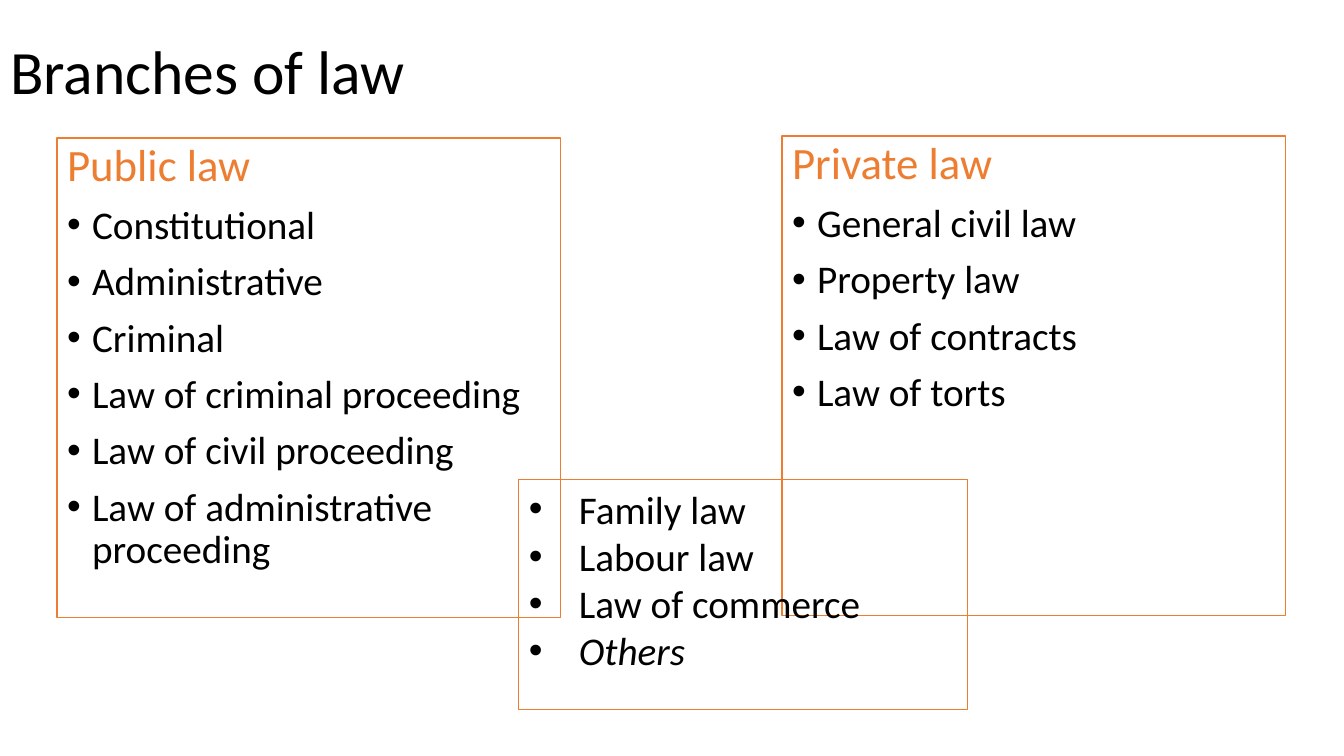
from pptx import Presentation
from pptx.dml.color import RGBColor
from pptx.enum.text import MSO_ANCHOR, MSO_AUTO_SIZE, PP_ALIGN
from pptx.util import Emu, Pt
from lxml import etree

LEFT, TOP, MIDDLE = PP_ALIGN.LEFT, MSO_ANCHOR.TOP, MSO_ANCHOR.MIDDLE
NO_AUTOFIT = MSO_AUTO_SIZE.NONE
DRAWING = "{http://schemas.openxmlformats.org/drawingml/2006/main}"
EMU_PER_PX = 12192000 / 1344
COLORS = {"text": "000000", "accent": "ED7D31"}
TWO_CONTENT = 3


def place(box, left, top, width, height, anchor=TOP, outlined=True):
    box.left, box.top, box.width, box.height = (
        Emu(round(length * EMU_PER_PX)) for length in (left, top, width, height))
    frame = box.text_frame
    frame.word_wrap = True
    frame.auto_size = NO_AUTOFIT
    frame.vertical_anchor = anchor
    if outlined:
        box.line.color.rgb = RGBColor.from_string(COLORS["accent"])
        box.line.width = Pt(0.75)


def write(frame, text, size=28, color="text", italic=False, indent=0, spacing=0.9, before=10):
    """Add a paragraph, bulleted when it has a hanging indent in px."""
    para = frame.paragraphs[0]
    if para.runs:
        para = frame.add_paragraph()
    para.alignment = LEFT
    para.line_spacing = spacing
    para.space_before = Pt(before)
    span = para.add_run()
    span.text = text
    span.font.name = "Calibri"
    span.font.size = Pt(size)
    span.font.italic = italic
    span.font.color.rgb = RGBColor.from_string(COLORS[color])
    hanging = round(indent * EMU_PER_PX)
    properties = para._p.get_or_add_pPr()
    properties.set("marL", str(hanging))
    properties.set("indent", str(-hanging))
    if indent:
        etree.SubElement(properties, DRAWING + "buFont", typeface="Arial")
        etree.SubElement(properties, DRAWING + "buChar", char="•")
    else:
        etree.SubElement(properties, DRAWING + "buNone")


deck = Presentation()
deck.slide_width = Emu(round(1344 * EMU_PER_PX))
deck.slide_height = Emu(round(756 * EMU_PER_PX))
page = deck.slides.add_slide(deck.slide_layouts[TWO_CONTENT])

title = page.shapes.title
place(title, 0, 2, 1159, 146, anchor=MIDDLE, outlined=False)
write(title.text_frame, "Branches of law", size=44, before=0)

branches = [
    (1, 57, 138, "Public law", [
        "Constitutional", "Administrative", "Criminal", "Law of criminal proceeding",
        "Law of civil proceeding", "Law of administrative proceeding"]),
    (2, 782, 136, "Private law", [
        "General civil law", "Property law", "Law of contracts", "Law of torts"]),
]
for index, left, top, heading, fields in branches:
    branch = page.placeholders[index]
    place(branch, left, top, 504, 480)
    write(branch.text_frame, heading, size=32, color="accent")
    for field in fields:
        write(branch.text_frame, field, indent=25)

mixed = page.shapes.add_textbox(0, 0, 0, 0)
place(mixed, 519, 480, 449, 230)
for field in ["Family law", "Labour law", "Law of commerce", "Others"]:
    write(mixed.text_frame, field, italic=field == "Others", indent=50, spacing=1.0, before=0)

for placeholder in list(page.placeholders):
    if not placeholder.text_frame.text:
        placeholder.element.getparent().remove(placeholder.element)

deck.save("out.pptx")
